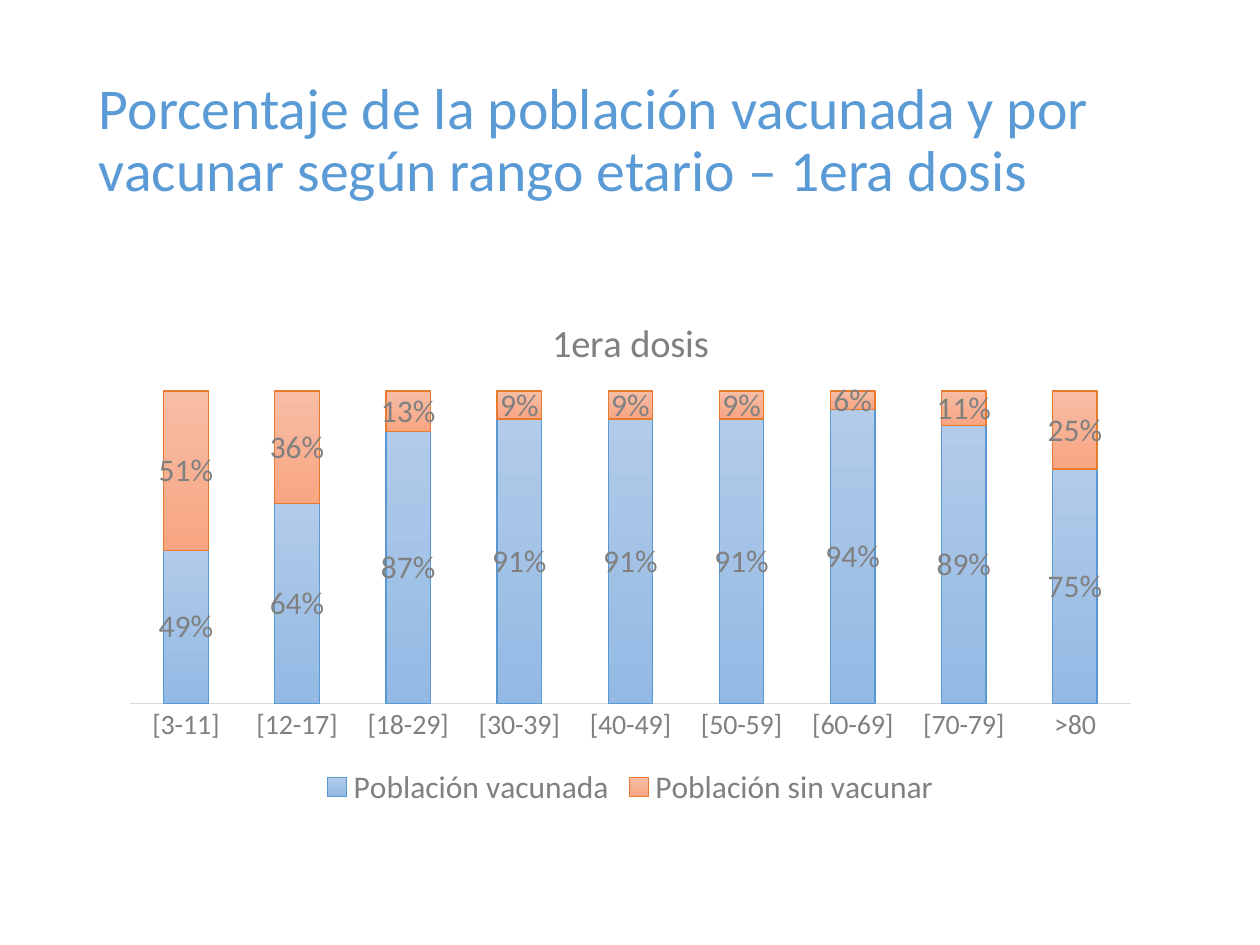
from pptx import Presentation
from pptx.chart.data import CategoryChartData
from pptx.dml.color import RGBColor
from pptx.enum.chart import XL_CHART_TYPE, XL_LABEL_POSITION, XL_LEGEND_POSITION, XL_TICK_MARK
from pptx.enum.text import MSO_ANCHOR
from pptx.oxml import parse_xml
from pptx.oxml.ns import nsdecls
from pptx.util import Pt

STACKED = XL_CHART_TYPE.COLUMN_STACKED
CENTER = XL_LABEL_POSITION.CENTER
BOTTOM = XL_LEGEND_POSITION.BOTTOM
NO_TICK = XL_TICK_MARK.NONE
MIDDLE = MSO_ANCHOR.MIDDLE

AGE_RANGES = ["[3-11]", "[12-17]", "[18-29]", "[30-39]", "[40-49]",
              "[50-59]", "[60-69]", "[70-79]", ">80"]
VACCINATED = [0.49, 0.64, 0.87, 0.91, 0.91, 0.91, 0.94, 0.89, 0.75]
# Name, values, gradient top, gradient bottom, outline
GROUPS = [
    ("Población vacunada", VACCINATED, "B1CBE9", "93B9E4", "5998D0"),
    ("Población sin vacunar", [round(1 - share, 2) for share in VACCINATED],
     "F7BDA5", "F8A582", "E87A30"),
]


def color(hex_code):
    return RGBColor.from_string(hex_code)


def format_font(font, size, hex_code):
    font.name = SlideStyle.FONT
    font.size = Pt(size)
    font.bold = False
    font.color.rgb = color(hex_code)


def write(frame, text, size=18, hex_code="808080", line_spacing=None):
    paragraph = frame.paragraphs[0]
    paragraph.line_spacing = line_spacing
    run = paragraph.add_run()
    run.text = text
    format_font(run.font, size, hex_code)


class SlideStyle:
    FONT = "Calibri"
    BLUE = "5B9BD5"
    GRAY = "808080"
    RULE = "D9D9D9"

    def __init__(self, slide):
        self.slide = slide

    def heading(self, text, left, top, width, height):
        frame = self.slide.shapes.add_textbox(
            Pt(left), Pt(top), Pt(width), Pt(height)).text_frame
        frame.word_wrap = True
        frame.vertical_anchor = MIDDLE
        write(frame, text, size=33, hex_code=self.BLUE, line_spacing=0.9)

    def stacked_chart(self, title, categories, groups, left, top, width, height):
        data = CategoryChartData(number_format="0%")
        data.categories = categories
        for name, shares, *_ in groups:
            data.add_series(name, shares)
        chart = self.slide.shapes.add_chart(
            STACKED, Pt(left), Pt(top), Pt(width), Pt(height), data).chart
        format_font(chart.font, 18, "000000")
        write(chart.chart_title.text_frame, title, size=22)

        # Legend
        chart.has_legend = True
        chart.legend.position = BOTTOM
        chart.legend.include_in_layout = False
        format_font(chart.legend.font, 18, self.GRAY)

        # Axes
        ages = chart.category_axis
        ages.major_tick_mark = ages.minor_tick_mark = NO_TICK
        ages.format.line.color.rgb = color(self.RULE)
        ages.format.line.width = Pt(0.75)
        format_font(ages.tick_labels.font, 16, self.GRAY)
        shares_axis = chart.value_axis
        shares_axis.minimum_scale, shares_axis.maximum_scale = 0, 1
        shares_axis.has_major_gridlines = False
        shares_axis.visible = False

        # Columns
        plot = chart.plots[0]
        plot.gap_width, plot.overlap = 150, 100
        for series, (_, _, light, dark, outline) in zip(plot.series, groups):
            self.column_style(series, light, dark, outline)
        self.plot_area(chart, x=0.02, y=0.19, w=0.96, h=0.6)

    def column_style(self, series, light, dark, outline):
        series.invert_if_negative = False
        fill = series.format.fill
        fill.gradient()
        fill.gradient_angle = 270
        for stop, shade in zip(fill.gradient_stops, (light, dark)):
            stop.color.rgb = color(shade)
        series.format.line.color.rgb = color(outline)
        series.format.line.width = Pt(0.75)
        labels = series.data_labels
        labels.show_value = True
        labels.position = CENTER
        labels.number_format = "0%"
        labels.number_format_is_linked = False
        format_font(labels.font, 18, self.GRAY)

    def plot_area(self, chart, **box):
        area = chart.plots[0]._element.getparent()
        for old in area.findall("{*}layout"):
            area.remove(old)
        sizes = "".join(f'<c:{key} val="{part}"/>' for key, part in box.items())
        area.insert(0, parse_xml(
            f'<c:layout {nsdecls("c")}><c:manualLayout><c:layoutTarget val="inner"/>'
            f'<c:xMode val="edge"/><c:yMode val="edge"/>{sizes}'
            '</c:manualLayout></c:layout>'))


def main():
    deck = Presentation()
    deck.slide_width, deck.slide_height = Pt(720), Pt(540)
    page = SlideStyle(deck.slides.add_slide(deck.slide_layouts[6]))

    # Heading
    page.heading("Porcentaje de la población vacunada y por vacunar "
                 "según rango etario – 1era dosis", 49.5, 28.75, 621, 104.4)

    # Shares by age range
    page.stacked_chart("1era dosis", AGE_RANGES, GROUPS, 62.6, 167, 595.4, 297.4)

    deck.save("out.pptx")


if __name__ == "__main__":
    main()
